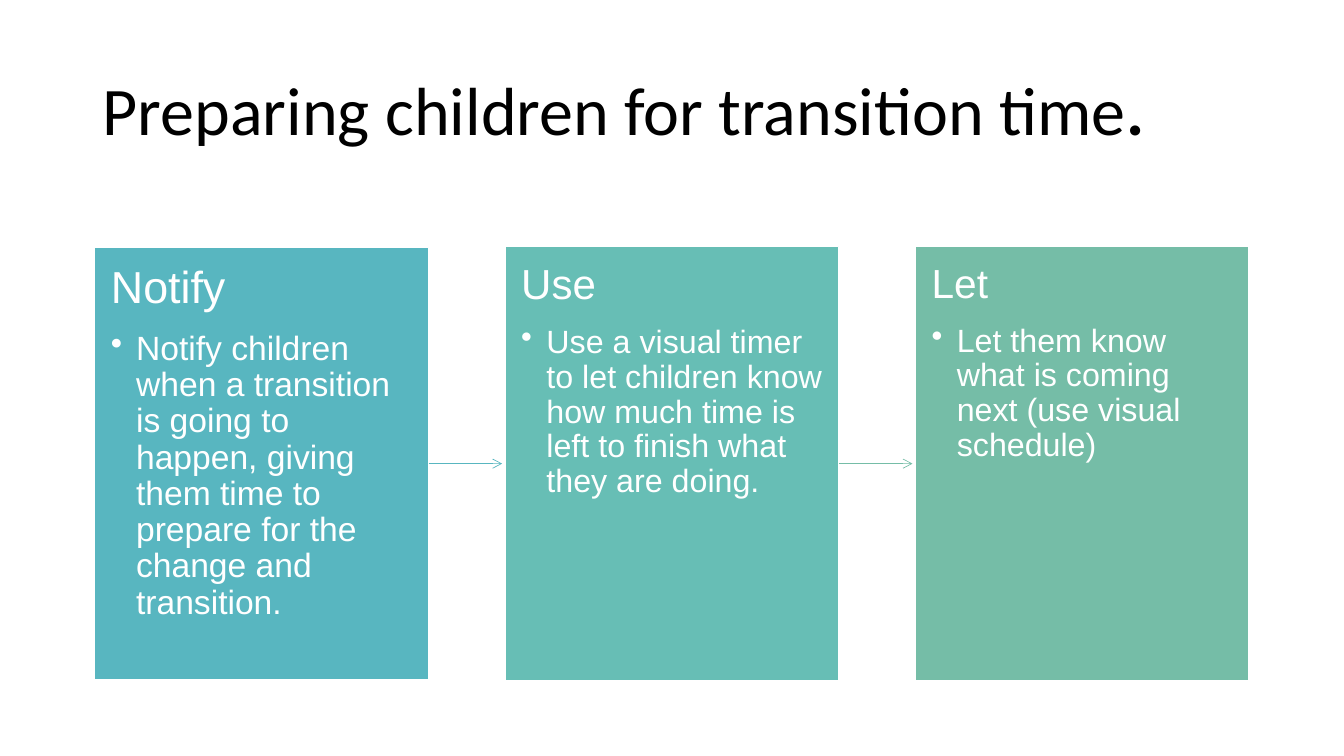
"""Build a slide with three steps that prepare children for transition time."""
from dataclasses import dataclass

import lxml.etree
import pptx
import pptx.dml.color
import pptx.enum.shapes
import pptx.enum.text
import pptx.oxml.ns
import pptx.util

Inches = pptx.util.Inches
Pt = pptx.util.Pt
qn = pptx.oxml.ns.qn

CARD_LEFT = 0.94
CARD_PITCH = 4.07
CARD_WIDTH = 3.31
CARD_MIDDLE = 4.6
ARROW_LENGTH = 0.73
LINE_SPACING = 0.9


@dataclass
class Step:
    heading: str
    detail: str
    fill: str
    height: float
    heading_size: int
    detail_size: int


STEPS = [
    Step("Notify", "Notify children when a transition is going to happen, giving them time "
         "to prepare for the change and transition.\u00a0", "58B6C0", 4.29, 32, 24),
    Step("Use", "Use a visual timer to let children know how much time is left to finish "
         "what they are doing.\u00a0", "67BEB5", 4.31, 30, 23),
    Step("Let", "Let them know what is coming next (use visual schedule)\u00a0",
         "75BDA7", 4.31, 29, 23),
]
ARROW_COLORS = ["58B6C0", "75BDA7"]


def color(value: str) -> pptx.dml.color.RGBColor:
    return pptx.dml.color.RGBColor.from_string(value)


def format_run(run, font: str, size: float, fill: str) -> None:
    run.font.name = font
    run.font.size = Pt(size)
    run.font.color.rgb = color(fill)


def add_bullet(paragraph) -> None:
    properties = paragraph._p.get_or_add_pPr()
    properties.set("marL", str(Inches(0.25)))
    properties.set("indent", str(Inches(-0.25)))
    lxml.etree.SubElement(properties, qn("a:buChar"), char="•")


def add_title(slide) -> None:
    title = slide.shapes.title
    title.left, title.top = Inches(0.92), Inches(0.4)
    title.width, title.height = Inches(11.5), Inches(1.45)
    title.text_frame.vertical_anchor = pptx.enum.text.MSO_ANCHOR.MIDDLE
    paragraph = title.text_frame.paragraphs[0]
    paragraph.alignment = pptx.enum.text.PP_ALIGN.LEFT
    paragraph.line_spacing = LINE_SPACING
    for text, bold in (("Preparing children for transition\u00a0time", False), (".\u00a0", True)):
        run = paragraph.add_run()
        run.text = text
        run.font.bold = bold
        format_run(run, "Calibri", 48.6, "000000")


def add_card(slide, step: Step, left: float):
    card = slide.shapes.add_shape(
        pptx.enum.shapes.MSO_SHAPE.RECTANGLE, Inches(left),
        Inches(CARD_MIDDLE - step.height / 2), Inches(CARD_WIDTH), Inches(step.height))
    card.shadow.inherit = False
    card.fill.solid()
    card.fill.fore_color.rgb = color(step.fill)
    card.line.color.rgb = color("FFFFFF")
    card.line.width = Pt(1)

    frame = card.text_frame
    frame.word_wrap = True
    frame.vertical_anchor = pptx.enum.text.MSO_ANCHOR.TOP
    frame.margin_left = frame.margin_right = Inches(0.16)
    frame.margin_top = frame.margin_bottom = Inches(0.17)
    frame.text = f"{step.heading}\n{step.detail}"
    heading, detail = frame.paragraphs
    for paragraph, size, gap in ((heading, step.heading_size, 0.4),
                                 (detail, step.detail_size, 0.15)):
        paragraph.alignment = pptx.enum.text.PP_ALIGN.LEFT
        paragraph.line_spacing = LINE_SPACING
        paragraph.space_after = Pt(round(size * gap))
        format_run(paragraph.runs[0], "Arial", size, "FFFFFF")
    detail.level = 1
    add_bullet(detail)
    return card


def add_arrow(slide, card, line_color: str) -> None:
    start = card.left + card.width
    middle = card.top + card.height // 2
    arrow = slide.shapes.add_connector(
        pptx.enum.shapes.MSO_CONNECTOR.STRAIGHT,
        start, middle, start + Inches(ARROW_LENGTH), middle)
    arrow.begin_connect(card, 3)
    arrow.line.color.rgb = color(line_color)
    arrow.line.width = Pt(0.5)
    lxml.etree.SubElement(arrow.line._get_or_add_ln(), qn("a:tailEnd"), type="arrow")
    lxml.etree.SubElement(arrow._element.spPr, qn("a:effectLst"))


def main() -> None:
    presentation = pptx.Presentation()
    presentation.slide_width = Inches(13.33)
    presentation.slide_height = Inches(7.5)
    slide = presentation.slides.add_slide(presentation.slide_layouts[5])
    add_title(slide)
    cards = [add_card(slide, step, CARD_LEFT + index * CARD_PITCH)
             for index, step in enumerate(STEPS)]
    for card, line_color in zip(cards, ARROW_COLORS):
        add_arrow(slide, card, line_color)
    presentation.save("out.pptx")


if __name__ == "__main__":
    main()
